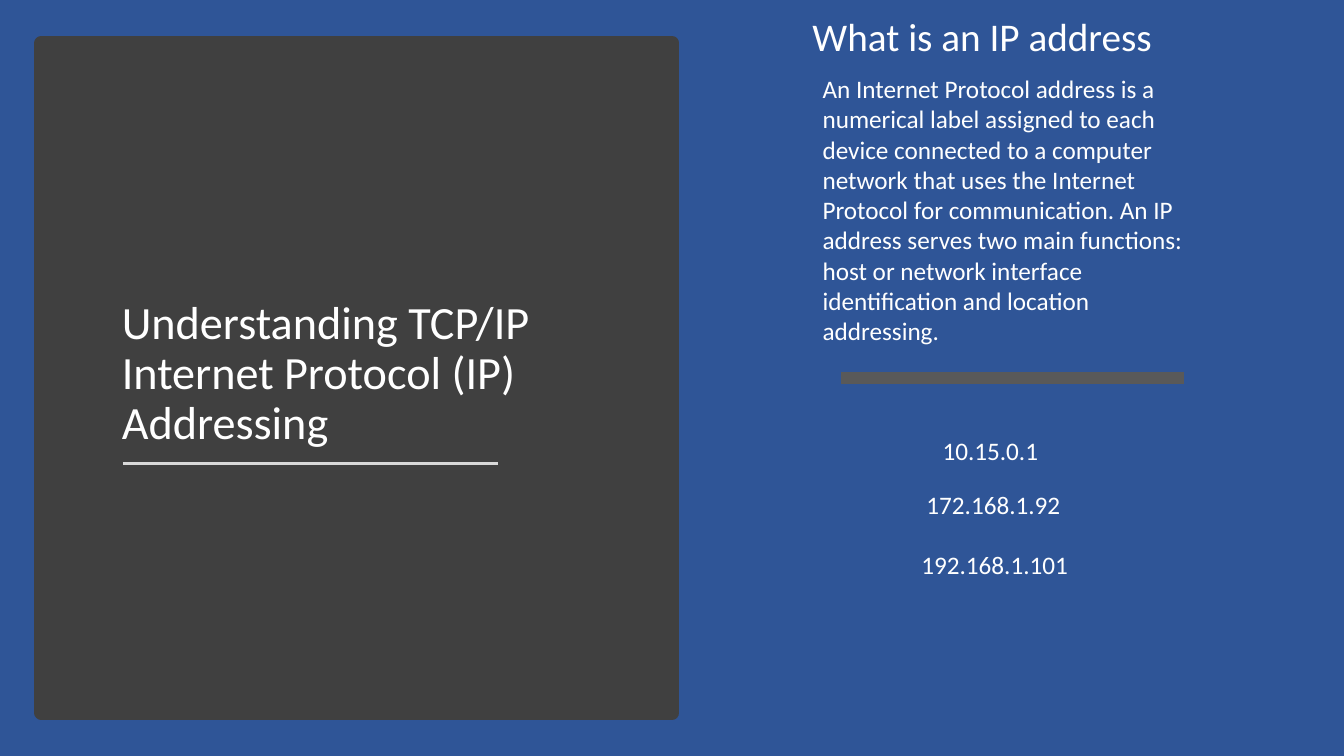
from lxml import etree
from pptx import Presentation
from pptx import util as u
from pptx.dml import color
from pptx.enum import shapes, text
from pptx.oxml import ns


def rgb(value):
    return color.RGBColor.from_string(value)


def write_text(box, content, size, font, ink, spacing=None):
    para = box.text_frame.paragraphs[0]
    para.text = content
    if spacing:
        para.line_spacing = spacing
    for span in para.runs:
        span.font.size = u.Pt(size)
        span.font.name = font
        span.font.color.rgb = rgb(ink)


class AddressingPage:
    font = "Calibri"
    ink = "FFFFFF"
    background = "2F5597"

    def __init__(self, deck):
        self.page = deck.slides.add_slide(deck.slide_layouts[6])
        fill = self.page.background.fill
        fill.solid()
        fill.fore_color.rgb = rgb(self.background)

    def panel(self, left, top, width, height, tone, border):
        box = self.page.shapes.add_shape(
            shapes.MSO_SHAPE.RECTANGLE,
            *map(u.Inches, (left, top, width, height)))
        box.shadow.inherit = False
        box.fill.solid()
        box.fill.fore_color.rgb = rgb(tone)
        box.line.color.rgb = rgb(tone)
        box.line.width = u.Pt(border)

    def rule(self, left, right, y, tone, weight):
        line = self.page.shapes.add_connector(
            shapes.MSO_CONNECTOR.STRAIGHT,
            *map(u.Inches, (left, y, right, y)))
        line.line.color.rgb = rgb(tone)
        line.line.width = u.Pt(weight)
        etree.SubElement(line._element.spPr, ns.qn("a:effectLst"))

    def label(self, content, left, top, width, height, size=18, wrap=False,
              anchor=text.MSO_ANCHOR.TOP, spacing=None):
        box = self.page.shapes.add_textbox(
            *map(u.Inches, (left, top, width, height)))
        box.text_frame.word_wrap = wrap
        box.text_frame.vertical_anchor = anchor
        write_text(box, content, size, self.font, self.ink, spacing)


def main():
    deck = Presentation()
    deck.slide_width = u.Inches(13.33)
    deck.slide_height = u.Inches(7.5)
    page = AddressingPage(deck)

    page.panel(0.41, 0.43, 6.26, 6.64, tone="404040", border=10)
    page.label("Understanding TCP/IP\vInternet Protocol (IP) Addressing",
               1.11, 1.15, 4.88, 3.36, size=33, wrap=True,
               anchor=text.MSO_ANCHOR.BOTTOM, spacing=0.9)
    page.rule(8.34, 11.74, 3.75, tone="595959", weight=8)
    page.rule(1.22, 4.94, 4.6, tone="D9D9D9", weight=1.75)

    page.label("What is an IP address", 7.96, 0.07, 3.61, 0.57, size=28)
    addresses = [
        ("10.15.0.1", 9.25, 4.27, 1.16),
        ("172.168.1.92", 9.09, 4.81, 1.54),
        ("192.168.1.101", 9.04, 5.4, 1.67),
    ]
    for address, left, top, width in addresses:
        page.label(address, left, top, width, 0.4)
    page.label("An Internet Protocol address is a numerical label assigned to "
               "each device connected to a computer network that uses the "
               "Internet Protocol for communication. An IP address serves two "
               "main functions: host or network interface identification and "
               "location addressing.", 8.06, 0.68, 3.92, 2.83, wrap=True)

    deck.save("out.pptx")


if __name__ == "__main__":
    main()
